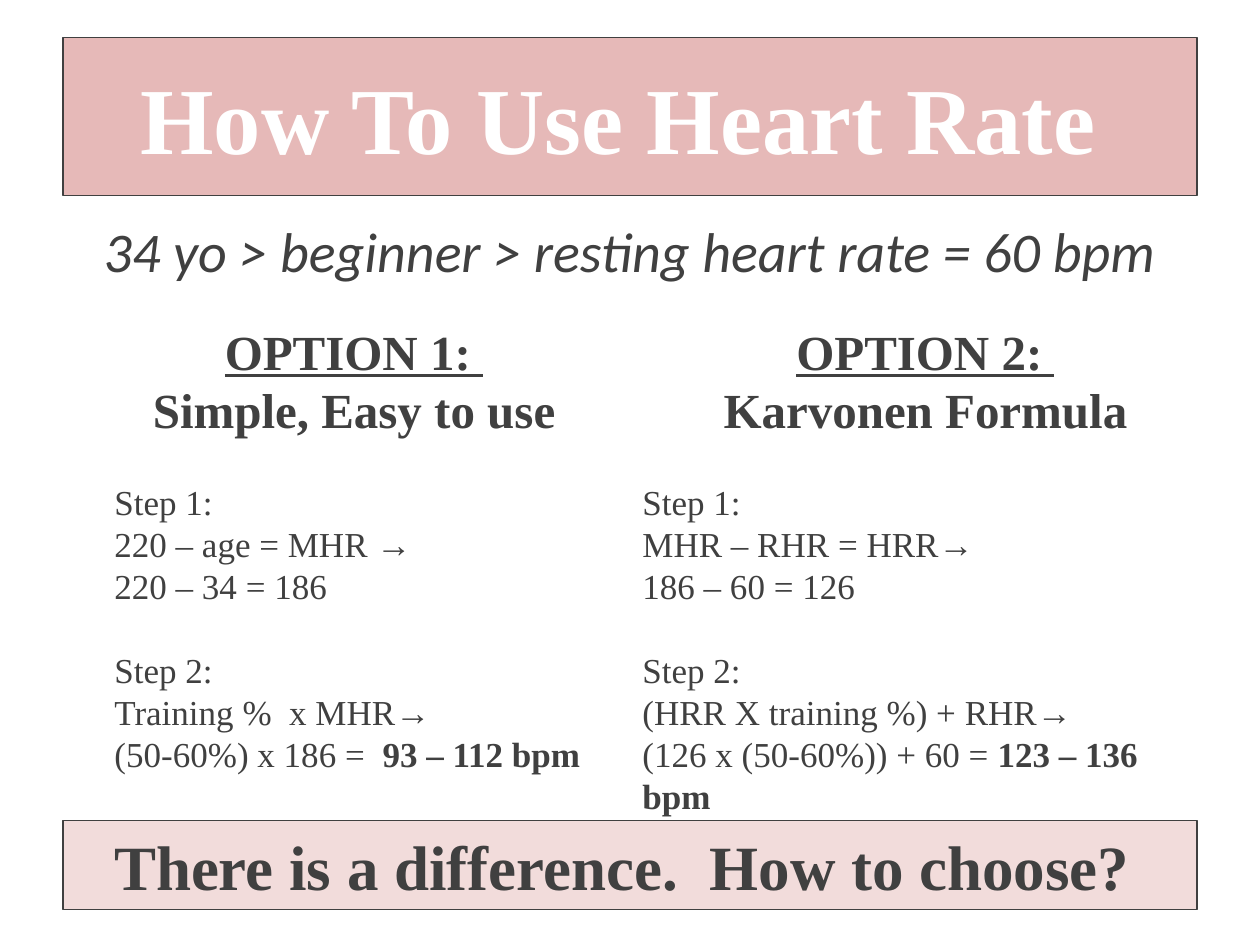
from dataclasses import dataclass

from pptx import Presentation
from pptx.dml.color import RGBColor
from pptx.enum.shapes import MSO_SHAPE
from pptx.enum.text import MSO_ANCHOR, PP_ALIGN
from pptx.util import Inches, Pt

W, H = 10, 7.5
MARGIN = 0.05 * W
BAND_W = W - 2 * MARGIN
SERIF, SANS = "Times New Roman", "Calibri"
DARK, WHITE, ROSE, PALE = "404040", "FFFFFF", "E6B9B8", "F2DCDB"
STEP_GAP = 24


@dataclass
class Step:
    name: str
    formula: str
    working: str
    result: str = ""


@dataclass
class Option:
    left: float
    width: float
    heading: str
    method: str
    steps: list[Step]


OPTIONS = [
    Option(0.81, 4, "OPTION 1: ", "Simple, Easy to use", [
        Step("Step 1:", "220 – age = MHR →", "220 – 34 = 186"),
        Step("Step 2:", "Training %  x MHR→", "(50-60%) x 186 =  ", "93 – 112 bpm"),
    ]),
    Option(5, 4.69, "OPTION 2: ", "Karvonen Formula", [
        Step("Step 1:", "MHR – RHR = HRR→", "186 – 60 = 126"),
        Step("Step 2:", "(HRR X training %) + RHR→", "(126 x (50-60%)) + 60 = ",
             "123 – 136 bpm"),
    ]),
]


def rgb(color: str) -> RGBColor:
    return RGBColor.from_string(color)


def box(left: float, top: float, width: float, height: float) -> tuple:
    return tuple(Inches(v) for v in (left, top, width, height))


def add_run(p, text: str, size: float, color: str = DARK, font: str = SERIF,
            bold: bool = False, italic: bool = False, underline: bool = False) -> None:
    r = p.add_run()
    r.text = text
    f = r.font
    f.name, f.size, f.color.rgb = font, Pt(size), rgb(color)
    f.bold, f.italic, f.underline = bold, italic, underline


def next_paragraph(tf, align=PP_ALIGN.LEFT, before: float = 0):
    # The first, still empty paragraph is used before any is added
    p = tf.paragraphs[0] if not tf.paragraphs[0].runs else tf.add_paragraph()
    p.alignment, p.space_before = align, Pt(before)
    return p


def style_band(sp, fill: str) -> None:
    sp.fill.solid()
    sp.fill.fore_color.rgb = rgb(fill)
    sp.line.color.rgb = rgb(DARK)
    sp.line.width = Pt(0.75)
    sp.text_frame.word_wrap = True
    sp.text_frame.vertical_anchor = MSO_ANCHOR.MIDDLE


def add_text(s, left: float, top: float, width: float, height: float):
    tf = s.shapes.add_textbox(*box(left, top, width, height)).text_frame
    tf.word_wrap = True
    return tf


def draw_option(s, option: Option) -> None:
    tf = add_text(s, option.left, H / 3, option.width, 3.74)
    add_run(next_paragraph(tf, PP_ALIGN.CENTER), option.heading, 28,
            bold=True, underline=True)
    add_run(next_paragraph(tf, PP_ALIGN.CENTER), option.method, 28, bold=True)
    for step in option.steps:
        add_run(next_paragraph(tf, before=STEP_GAP), step.name, 20)
        add_run(next_paragraph(tf), step.formula, 20)
        p = next_paragraph(tf)
        add_run(p, step.working, 20)
        if step.result:
            add_run(p, step.result, 20, bold=True)


def main() -> None:
    prs = Presentation()
    prs.slide_width, prs.slide_height = Inches(W), Inches(H)
    s = prs.slides.add_slide(prs.slide_layouts[5])

    # Title band
    title = s.shapes.title
    title.left, title.top, title.width, title.height = box(MARGIN, 0.3, BAND_W, 1.25)
    style_band(title, ROSE)
    add_run(next_paragraph(title.text_frame, PP_ALIGN.CENTER),
            "How To Use Heart Rate ", 54, WHITE, bold=True)

    # Example client
    tf = add_text(s, MARGIN, 1.67, BAND_W, 0.83)
    add_run(next_paragraph(tf, PP_ALIGN.CENTER),
            "34 yo > beginner > resting heart rate = 60 bpm", 32, font=SANS, italic=True)

    # Two ways to calculate
    for option in OPTIONS:
        draw_option(s, option)

    # Closing question
    sp = s.shapes.add_shape(MSO_SHAPE.RECTANGLE, *box(MARGIN, 6.51, BAND_W, 0.71))
    sp.shadow.inherit = False
    style_band(sp, PALE)
    add_run(next_paragraph(sp.text_frame, PP_ALIGN.CENTER),
            "There is a difference.  How to choose? ", 36, bold=True)

    prs.save("out.pptx")


if __name__ == "__main__":
    main()
